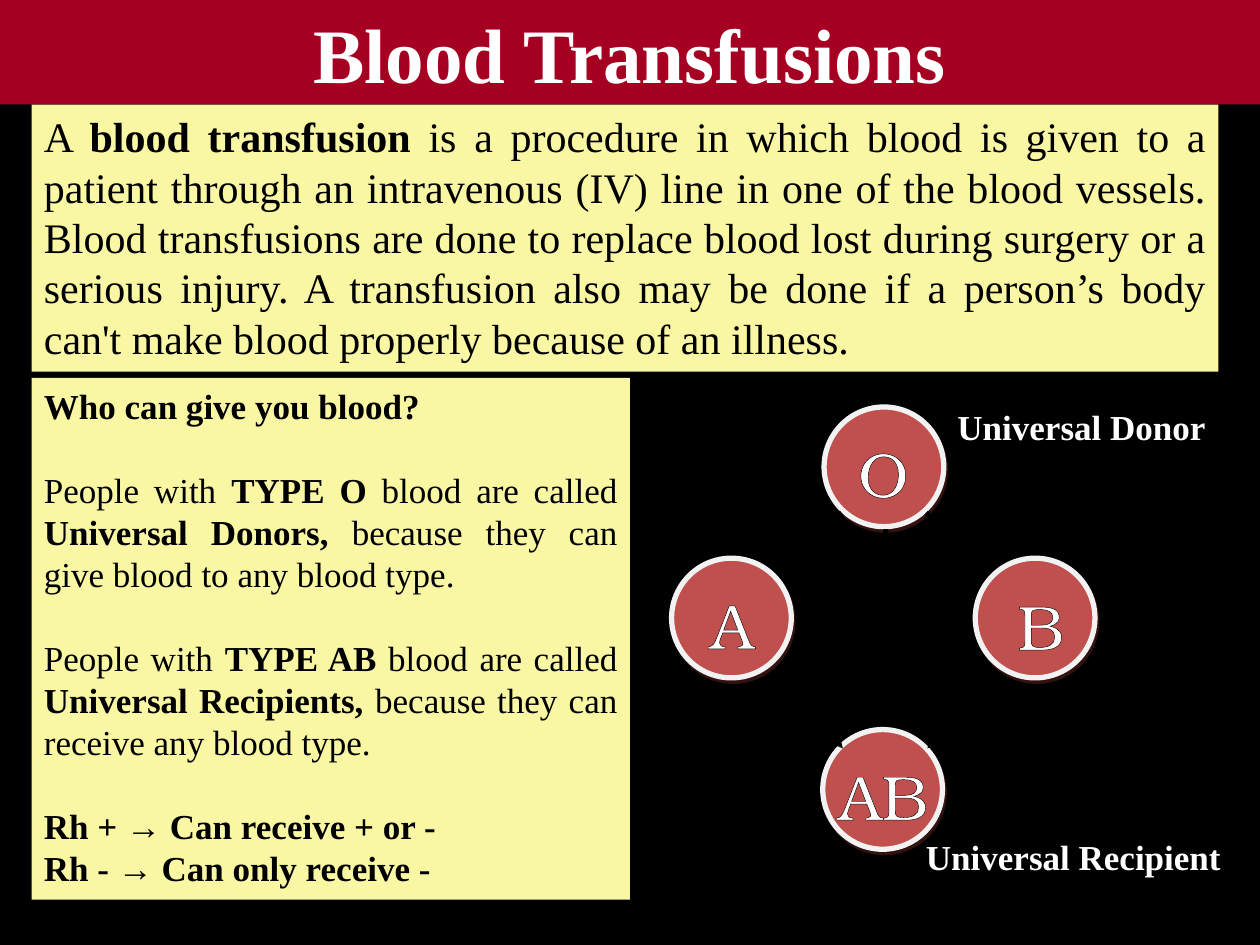
from pptx import Presentation
from pptx.util import Inches, Pt
from pptx.dml.color import RGBColor
from pptx.enum.shapes import MSO_SHAPE as Shape, MSO_CONNECTOR as Line
from pptx.enum.text import MSO_ANCHOR as Anchor, PP_ALIGN as Align
from pptx.oxml import parse_xml
from pptx.oxml.ns import nsdecls

COLORS = {"black": "000000", "white": "FFFFFF", "band": "A50021",
          "note": "FAF7A4", "cell": "C0504D", "rim": "F2F2F2",
          "shade": "622423"}
SERIF, SLAB = "Times New Roman", "TeX Gyre Bonum"

# Content: ** switches bold on and off
TITLE = "**Blood Transfusions**"
INTRO = ("A **blood transfusion **is a procedure in which blood is given to a "
         "patient through an intravenous (IV) line in one of the blood "
         "vessels. Blood transfusions are done to replace blood lost during "
         "surgery or a serious injury. A transfusion also may be done if a "
         "person’s body can't make blood properly because of an illness.")
# text, alignment, points before
FACTS = [
    ("**Who can give you blood?**", Align.JUSTIFY, 0),
    ("People with **TYPE O **blood are called **Universal Donors, **because "
     "they can give blood to any blood type.", Align.JUSTIFY, 24),
    ("People with **TYPE AB **blood are called **Universal Recipients, "
     "**because they can receive any blood type.", Align.JUSTIFY, 24),
    ("**Rh + → Can receive + or -**", Align.LEFT, 24),
    ("**Rh - → Can only receive -**", Align.LEFT, 0),
]
# letter, circle left and top, letter left, top and width, letter turn
SIZE = 0.95
TYPES = [
    ("A", 5.33, 4.43, 5.58, 4.6, 0.46, 0),
    ("B", 7.74, 4.43, 8.03, 4.61, 0.46, 0),
    ("O", 6.54, 3.23, 6.79, 3.4, 0.46, 6.1),
    ("AB", 6.53, 5.79, 6.61, 5.96, 0.8, 0),
]
# from x, y to x, y
ARROWS = [
    (7.03, 4.2, 7.01, 5.76),
    (6.68, 4.07, 6.14, 4.53),
    (7.35, 4.07, 7.88, 4.53),
    (6.15, 5.32, 6.69, 5.94),
    (7.9, 5.32, 7.36, 5.94),
]
LABELS = [("**Universal Donor**", 7.5, 3.17, 2.55),
          ("**Universal Recipient**", 7.25, 6.58, 2.75)]


def rgb(name):
    return RGBColor.from_string(COLORS[name])


def xml(tag, inner="", attrs=""):
    return parse_xml(f'<a:{tag} {nsdecls("a")} {attrs}>{inner}</a:{tag}>')


def tint(name):
    return f'<a:solidFill><a:srgbClr val="{COLORS[name]}"/></a:solidFill>'


def write(box, text, size=20, font=SERIF, color="black", align=Align.LEFT,
          anchor=Anchor.TOP, wrap=True, side=0.1, edge=None):
    """Fill a box with one text, or with a list of (text, align, before)."""
    frame = box.text_frame
    frame.word_wrap = wrap
    frame.vertical_anchor = anchor
    frame.margin_left = frame.margin_right = Inches(side)
    rows = [(text, align, 0)] if isinstance(text, str) else text
    for i, (words, flow, gap) in enumerate(rows):
        para = frame.add_paragraph() if i else frame.paragraphs[0]
        para.alignment = flow
        para.space_before = Pt(gap)
        for j, part in enumerate(words.split("**")):
            if not part:
                continue
            run = para.add_run()
            run.text = part
            face = run.font
            face.size, face.name, face.bold = Pt(size), font, j % 2 == 1
            face.color.rgb = rgb(color)
            if edge:
                face._element.insert(0, xml("ln", tint(edge), 'w="9525"'))


def panel(home, kind, x, y, w, h, fill):
    part = home.add_shape(kind, Inches(x), Inches(y), Inches(w), Inches(h))
    part.shadow.inherit = False
    part.fill.solid()
    part.fill.fore_color.rgb = rgb(fill)
    part.line.fill.background()
    return part


def textbox(home, x, y, w, h):
    return home.add_textbox(Inches(x), Inches(y), Inches(w), Inches(h))


def circle(home, x, y):
    disc = panel(home, Shape.OVAL, x, y, SIZE, SIZE, "cell")
    disc.line.color.rgb = rgb("rim")
    disc.line.width = Pt(3)
    # Swap the empty effect list for a hard drop shadow
    props = disc._element.spPr
    props.remove(props.find("{*}effectLst"))
    props.append(xml("effectLst", (
        '<a:outerShdw blurRad="0" dist="28000" dir="3780000" algn="ctr" '
        f'rotWithShape="0"><a:srgbClr val="{COLORS["shade"]}">'
        '<a:alpha val="50000"/></a:srgbClr></a:outerShdw>')))


def arrow(home, *ends):
    link = home.add_connector(Line.STRAIGHT, *map(Inches, ends))
    link.line.color.rgb = rgb("black")
    link.line.width = Pt(3)
    link.line._get_or_add_ln().append(xml("tailEnd", attrs='type="triangle"'))
    link._element.spPr.append(xml("effectLst"))


def main():
    deck = Presentation()
    deck.slide_width, deck.slide_height = Inches(10), Inches(7.5)
    slide = deck.slides.add_slide(deck.slide_layouts[6])
    slide.background.fill.solid()
    slide.background.fill.fore_color.rgb = rgb("black")
    shapes = slide.shapes

    # Title band and definition
    write(panel(shapes, Shape.RECTANGLE, 0, 0, 10, 0.83, "band"), TITLE,
          size=44, color="white", align=Align.CENTER, anchor=Anchor.MIDDLE)
    write(panel(shapes, Shape.RECTANGLE, 0.25, 0.83, 9.42, 2.12, "note"),
          INTRO, size=24, align=Align.JUSTIFY)

    # Blood type diagram
    group = shapes.add_group_shape().shapes
    for name, x, y, left, top, wide, turn in TYPES:
        circle(group, x, y)
        box = textbox(group, left, top, wide, 0.58)
        box.rotation = turn
        write(box, name, size=36, font=SLAB, color="white",
              align=Align.CENTER, wrap=False, side=0, edge="black")
    for ends in ARROWS:
        arrow(group, *ends)

    # Donor facts and labels
    write(panel(shapes, Shape.RECTANGLE, 0.25, 3, 4.75, 4.14, "note"), FACTS)
    for text, x, y, wide in LABELS:
        write(textbox(shapes, x, y, wide, 0.44), text, color="white")

    deck.save("out.pptx")


if __name__ == "__main__":
    main()
